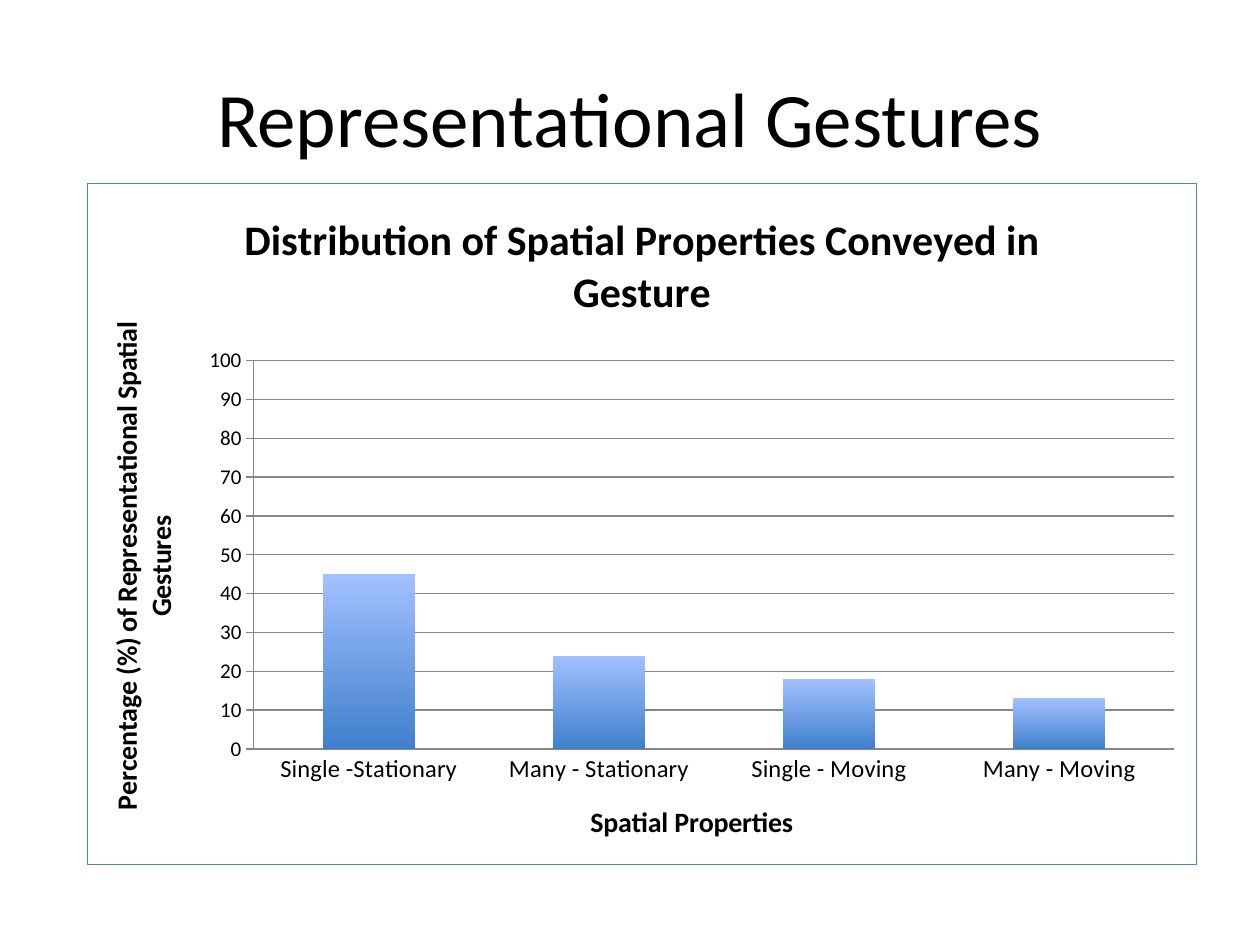
from lxml import etree
from pptx import Presentation
from pptx import util as u
from pptx.chart.data import CategoryChartData
from pptx.dml.color import RGBColor
from pptx.enum import chart as charts, text
from pptx.oxml import parse_xml
from pptx.oxml.ns import nsdecls, qn

COLORS = {"ink": "000000", "border": "4F81BD", "grid": "868686",
          "bar top": "A3C0FF", "bar bottom": "3F80CD"}
DISTRIBUTION = {"Single -Stationary": 45, "Many - Stationary": 24,
                "Single - Moving": 18, "Many - Moving": 13}


def color(name):
    return RGBColor.from_string(COLORS[name])


def style_font(font, size, bold=False):
    font.name, font.size, font.bold = "Calibri", u.Pt(size), bold
    font.color.rgb = color("ink")


def write(frame, words, size, bold=False):
    para = frame.paragraphs[0]
    para.alignment = text.PP_ALIGN.CENTER
    span = para.add_run()
    span.text = words
    style_font(span.font, size, bold)


def add_border(chart):
    """Outline the whole chart area."""
    border = parse_xml(
        f'<c:spPr {nsdecls("c", "a")}><a:ln w="{u.Pt(0.75)}"><a:solidFill>'
        f'<a:srgbClr val="{COLORS["border"]}"/></a:solidFill></a:ln></c:spPr>')
    chart._chartSpace.find(qn("c:chart")).addnext(border)


def place_plot(chart, **fractions):
    """Fix the inner plot area, as fractions of the chart's size."""
    area = chart._chartSpace.find(".//" + qn("c:plotArea"))
    for old in area.findall(qn("c:layout")):
        area.remove(old)
    layout = parse_xml(f'<c:layout {nsdecls("c")}><c:manualLayout/></c:layout>')
    settings = {"layoutTarget": "inner", "xMode": "edge", "yMode": "edge", **fractions}
    for tag, value in settings.items():
        etree.SubElement(layout[0], qn(f"c:{tag}")).set("val", str(value))
    area.insert(0, layout)


class SlideBuilder:
    """Holds the deck's style and the current page."""

    def __init__(self, deck):
        self.page = deck.slides.add_slide(deck.slide_layouts[5])

    def title(self, words, left, top, width, height):
        box = self.page.shapes.title
        box.left, box.top, box.width, box.height = map(u.Pt, (left, top, width, height))
        box.text_frame.vertical_anchor = text.MSO_ANCHOR.MIDDLE
        write(box.text_frame, words, size=44)

    def axis(self, axis, words, size, tick):
        write(axis.axis_title.text_frame, words, size=16, bold=True)
        style_font(axis.tick_labels.font, size)
        axis.major_tick_mark = tick
        axis.minor_tick_mark = charts.XL_TICK_MARK.NONE
        axis.format.line.color.rgb = color("grid")

    def column_chart(self, heading, values, category_title, value_title,
                     left, top, width, height):
        data = CategoryChartData()
        data.categories = list(values)
        data.add_series("Series 1", list(values.values()))
        chart = self.page.shapes.add_chart(
            charts.XL_CHART_TYPE.COLUMN_CLUSTERED,
            *map(u.Pt, (left, top, width, height)), data).chart
        style_font(chart.font, 10)
        chart.has_legend = False
        write(chart.chart_title.text_frame, heading, size=24, bold=True)

        self.axis(chart.category_axis, category_title, 14, charts.XL_TICK_MARK.NONE)
        scale = chart.value_axis
        self.axis(scale, value_title, 12, charts.XL_TICK_MARK.CROSS)
        scale.minimum_scale, scale.maximum_scale, scale.major_unit = 0, 100, 10
        scale.has_major_gridlines = True
        scale.major_gridlines.format.line.color.rgb = color("grid")

        plot = chart.plots[0]
        plot.gap_width, plot.vary_by_categories = 150, False
        fill = plot.series[0].format.fill
        fill.gradient()
        fill.gradient_angle = 270
        for stop, name in zip(fill.gradient_stops, ("bar top", "bar bottom")):
            stop.color.rgb = color(name)
        add_border(chart)
        place_plot(chart, x=0.15, y=0.26, w=0.83, h=0.57)


def main():
    deck = Presentation()
    deck.slide_width, deck.slide_height = u.Pt(720), u.Pt(540)
    builder = SlideBuilder(deck)
    builder.title("Representational Gestures", 36, 21.6, 648, 90)
    builder.column_chart(
        "Distribution of Spatial Properties Conveyed in Gesture", DISTRIBUTION,
        "Spatial Properties", "Percentage (%) of Representational Spatial Gestures",
        49.6, 104.6, 634.4, 390)
    deck.save("out.pptx")


if __name__ == "__main__":
    main()
